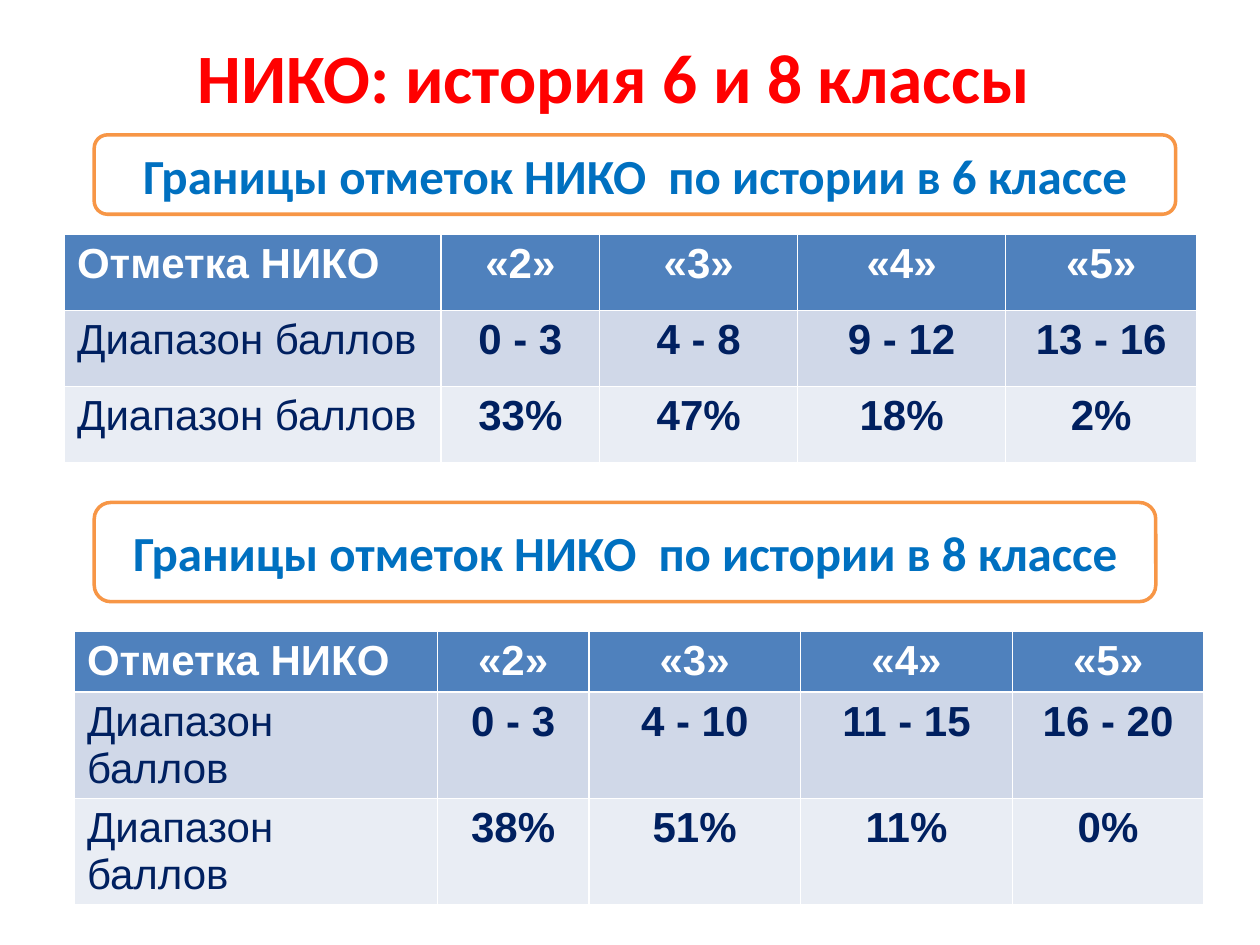
"""Builds the slide with the mark boundaries for history in classes 6 and 8."""
import pptx
import pptx.dml.color
import pptx.enum.shapes
import pptx.enum.text
import pptx.util

Cm = pptx.util.Cm
RGBColor = pptx.dml.color.RGBColor
ALIGN = pptx.enum.text.PP_ALIGN
ANCHOR = pptx.enum.text.MSO_ANCHOR

RED = RGBColor(0xFF, 0x00, 0x00)
BLUE = RGBColor(0x00, 0x70, 0xC0)
NAVY = RGBColor(0x00, 0x20, 0x60)
WHITE = RGBColor(0xFF, 0xFF, 0xFF)
ORANGE = RGBColor(0xF7, 0x96, 0x46)
HEADER_FILL = RGBColor(0x4F, 0x81, 0xBD)
ROW_FILLS = (HEADER_FILL, RGBColor(0xD0, 0xD8, 0xE8), RGBColor(0xE9, 0xED, 0xF4))

MARKS = ("Отметка НИКО", "«2»", "«3»", "«4»", "«5»")
ROW_LABEL = "Диапазон баллов"


class SlideBuilder:
    heading_font = "Calibri"
    table_font = "Arial"
    table_size = 24
    box_size = 28

    def __init__(self, slide):
        self.slide = slide

    def set_text(self, frame, text, font, size, color, bold=True, align=ALIGN.CENTER):
        frame.text = text
        paragraph = frame.paragraphs[0]
        paragraph.alignment = align
        paragraph.font.name = font
        paragraph.font.size = pptx.util.Pt(size)
        paragraph.font.bold = bold
        paragraph.font.color.rgb = color

    def place_title(self, text, left, top, width, height):
        title = self.slide.shapes.title
        title.left, title.top, title.width, title.height = map(Cm, (left, top, width, height))
        frame = title.text_frame
        frame.auto_size = pptx.enum.text.MSO_AUTO_SIZE.NONE
        frame.vertical_anchor = ANCHOR.MIDDLE
        frame.margin_right = Cm(0.89)
        self.set_text(frame, text, self.heading_font, 39.6, RED)

    def add_box(self, text, left, top, width, height):
        box = self.slide.shapes.add_shape(
            pptx.enum.shapes.MSO_SHAPE.ROUNDED_RECTANGLE, *map(Cm, (left, top, width, height)))
        box.shadow.inherit = False
        box.fill.solid()
        box.fill.fore_color.rgb = WHITE
        box.line.color.rgb = ORANGE
        box.line.width = pptx.util.Pt(2)
        box.text_frame.vertical_anchor = ANCHOR.MIDDLE
        self.set_text(box.text_frame, text, self.heading_font, self.box_size, BLUE)

    def add_marks_table(self, rows, left, top, column_widths, row_heights):
        table = self.slide.shapes.add_table(
            len(rows), len(column_widths), Cm(left), Cm(top),
            Cm(sum(column_widths)), Cm(sum(row_heights))).table
        for column, width in zip(table.columns, column_widths):
            column.width = Cm(width)
        for row, height in zip(table.rows, row_heights):
            row.height = Cm(height)
        for row_index, (values, fill) in enumerate(zip(rows, ROW_FILLS)):
            is_header = row_index == 0
            for column_index, value in enumerate(values):
                is_label = column_index == 0
                cell = table.cell(row_index, column_index)
                cell.fill.solid()
                cell.fill.fore_color.rgb = fill
                self.set_text(cell.text_frame, value, self.table_font, self.table_size,
                              WHITE if is_header else NAVY,
                              bold=is_header or not is_label,
                              align=ALIGN.LEFT if is_label else ALIGN.CENTER)


def main():
    presentation = pptx.Presentation()
    presentation.slide_width, presentation.slide_height = Cm(25.4), Cm(19.05)
    builder = SlideBuilder(presentation.slides.add_slide(presentation.slide_layouts[5]))
    builder.place_title("НИКО: история 6 и 8 классы", 1.27, 0.53, 22.86, 2.01)
    builder.add_marks_table(
        (MARKS,
         (ROW_LABEL, "0 - 3", "4 - 8", "9 - 12", "13 - 16"),
         (ROW_LABEL, "33%", "47%", "18%", "2%")),
        1.3, 4.73, (7.59, 3.2, 3.99, 4.19, 3.86), (1.53, 1.53, 1.53))
    builder.add_marks_table(
        (MARKS,
         (ROW_LABEL, "0 - 3", "4 - 10", "11 - 15", "16 - 20"),
         (ROW_LABEL, "38%", "51%", "11%", "0%")),
        1.5, 12.73, (7.32, 3.05, 4.27, 4.27, 3.86), (1.22, 1.6, 1.22))
    builder.add_box("Границы отметок НИКО  по истории в 6 классе", 1.9, 2.72, 21.8, 1.6)
    builder.add_box("Границы отметок НИКО  по истории в 8 классе", 1.9, 10.13, 21.4, 2)
    presentation.save("out.pptx")


if __name__ == "__main__":
    main()
